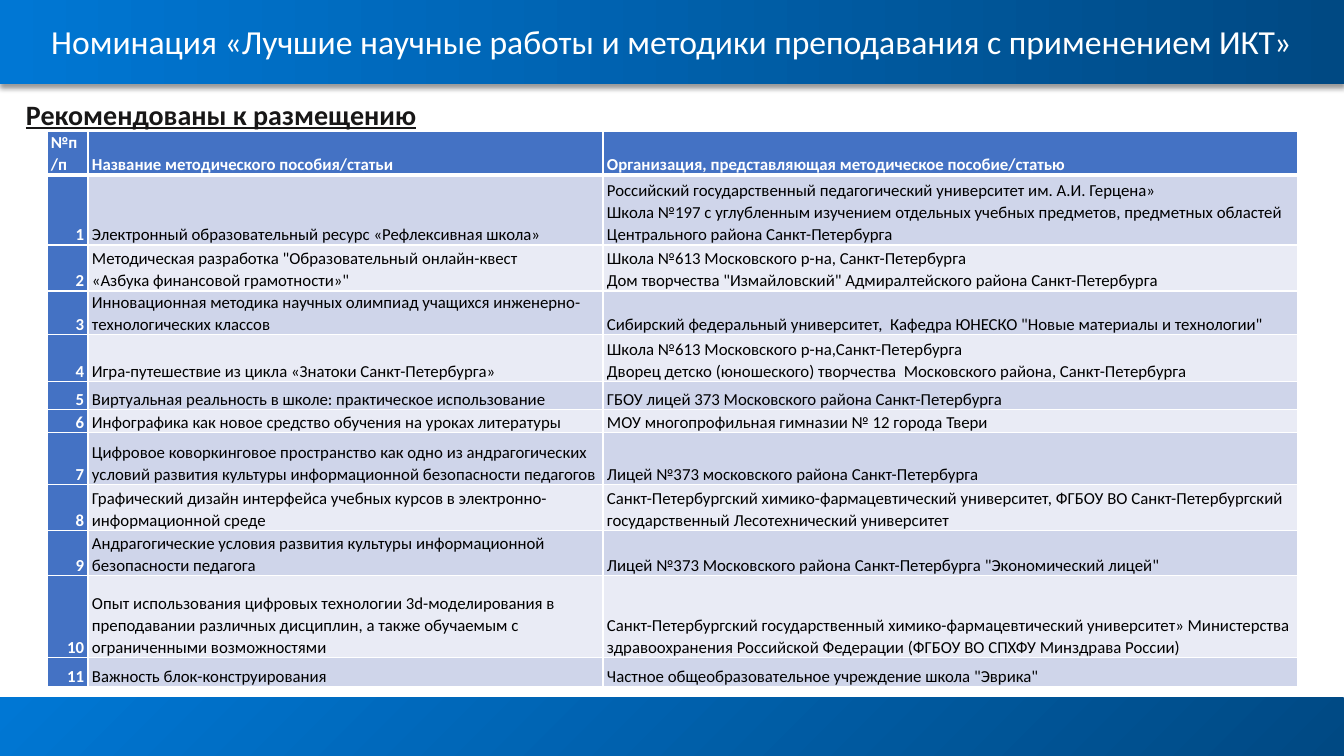
from lxml import etree
from pptx import Presentation
from pptx.dml.color import RGBColor
from pptx.enum.shapes import MSO_SHAPE
from pptx.enum.text import MSO_ANCHOR, PP_ALIGN
from pptx.oxml import parse_xml
from pptx.oxml.ns import nsdecls, qn
from pptx.util import Pt

RECT = MSO_SHAPE.RECTANGLE
MIDDLE, BOTTOM = MSO_ANCHOR.MIDDLE, MSO_ANCHOR.BOTTOM
LEFT, CENTER, RIGHT = PP_ALIGN.LEFT, PP_ALIGN.CENTER, PP_ALIGN.RIGHT

WIDE, HIGH = 1344, 756
SCALE = 12192000 / WIDE
FONT = "Calibri"
COLORS = {
    "navy": "004983", "sky": "0077D4", "white": "FFFFFF", "black": "000000",
    "ink": "181717", "head": "4472C4", "odd": "CFD5EA", "even": "E9EBF5",
}

TITLE = "Номинация «Лучшие научные работы и методики преподавания с применением ИКТ»"
COLS = [41, 515, 695]
HEIGHTS = [44, 70, 46, 44, 47, 28, 23, 52, 46, 45, 82, 29]
HEADER = ("№п/п", "Название методического пособия/статьи",
          "Организация, представляющая методическое пособие/статью")
WORKS = [
    ("Электронный образовательный ресурс «Рефлексивная школа»",
     "Российский государственный педагогический университет им. А.И. Герцена»\v"
     "Школа №197 с углубленным изучением отдельных учебных предметов, "
     "предметных областей Центрального района Санкт-Петербурга"),
    ("Методическая разработка \"Образовательный онлайн-квест\v"
     "«Азбука финансовой грамотности»\"",
     "Школа №613 Московского р-на, Санкт-Петербурга\n"
     "Дом творчества \"Измайловский\" Адмиралтейского района Санкт-Петербурга"),
    ("Инновационная методика научных олимпиад учащихся "
     "инженерно-технологических классов",
     "Сибирский федеральный университет,  Кафедра ЮНЕСКО "
     "\"Новые материалы и технологии\""),
    ("Игра-путешествие из цикла «Знатоки Санкт-Петербурга»",
     "Школа №613 Московского р-на,Санкт-Петербурга\v"
     "Дворец детско (юношеского) творчества  Московского района, Санкт-Петербурга"),
    ("Виртуальная реальность в школе: практическое использование",
     "ГБОУ лицей 373 Московского района Санкт-Петербурга"),
    ("Инфографика как новое средство обучения на уроках литературы",
     "МОУ многопрофильная гимназии № 12 города Твери"),
    ("Цифровое коворкинговое пространство как одно из андрагогических "
     "условий развития культуры информационной безопасности педагогов",
     "Лицей №373 московского района Санкт-Петербурга"),
    ("Графический дизайн интерфейса учебных курсов в "
     "электронно-информационной среде",
     "Санкт-Петербургский химико-фармацевтический университет, ФГБОУ ВО "
     "Санкт-Петербургский государственный Лесотехнический университет"),
    ("Андрагогические условия развития культуры информационной "
     "безопасности педагога",
     "Лицей №373 Московского района Санкт-Петербурга \"Экономический лицей\""),
    ("Опыт использования цифровых технологии 3d-моделирования в преподавании "
     "различных дисциплин, а также обучаемым с ограниченными возможностями",
     "Санкт-Петербургский государственный химико-фармацевтический университет» "
     "Министерства здравоохранения Российской Федерации "
     "(ФГБОУ ВО СПХФУ Минздрава России)"),
    ("Важность блок-конструирования",
     "Частное общеобразовательное учреждение школа \"Эврика\""),
]


def px(size):
    """Turn pixels into EMU."""
    return round(size * SCALE)


def tint(name):
    """Return the named colour."""
    return RGBColor.from_string(COLORS[name])


def write(frame, text, size, color, bold=False, line=False, align=LEFT, gap=1.0):
    """Fill a frame with paragraphs whose parts are set apart by line breaks."""
    for index, block in enumerate(text.split("\n")):
        para = frame.add_paragraph() if index else frame.paragraphs[0]
        para.alignment, para.line_spacing = align, gap
        for place, part in enumerate(block.split("\v")):
            if place:
                para.add_line_break()
            run = para.add_run()
            run.text = part
            font = run.font
            font.name, font.size = FONT, Pt(size)
            font.bold, font.underline = bold, line
            font.color.rgb = tint(color)


def add_bar(slide, top, high, stops, angle):
    """Add a full-width gradient bar."""
    bar = slide.shapes.add_shape(RECT, 0, px(top), px(WIDE), px(high))
    bar.shadow.inherit = False
    bar.line.fill.background()
    bar.fill.gradient()
    bar.fill.gradient_angle = angle
    for stop, name in zip(bar.fill.gradient_stops, stops):
        stop.color.rgb = tint(name)
    return bar


def add_shade(bar):
    """Drop a soft shadow below a bar."""
    effects = bar._element.spPr.find(qn("a:effectLst"))
    effects.append(parse_xml(
        f'<a:outerShdw {nsdecls("a")} blurRad="{Pt(4)}" dist="{Pt(3)}" '
        'dir="5400000" algn="t" rotWithShape="0">'
        f'<a:srgbClr val="{COLORS["black"]}"><a:alpha val="40000"/></a:srgbClr>'
        '</a:outerShdw>'))


def add_label(slide, left, top, wide, high):
    """Add a wrapping text box and return its frame."""
    box = slide.shapes.add_textbox(px(left), px(top), px(wide), px(high))
    box.text_frame.word_wrap = True
    return box.text_frame


def add_edges(cell, row):
    """Draw white borders, thick below the header row."""
    props = cell._tc.get_or_add_tcPr()
    widths = {"L": 1, "R": 1, "T": 3 if row == 1 else 1, "B": 1 if row else 3}
    for index, (side, width) in enumerate(widths.items()):
        edge = etree.Element(qn(f"a:ln{side}"), w=str(Pt(width)))
        fill = etree.SubElement(edge, qn("a:solidFill"))
        etree.SubElement(fill, qn("a:srgbClr"), val=COLORS["white"])
        props.insert(index, edge)


def fill_cell(cell, text, row, col):
    """Style and fill one table cell."""
    strong = row == 0 or col == 0
    cell.margin_left = cell.margin_right = px(4)
    cell.margin_top = cell.margin_bottom = 0
    cell.vertical_anchor = BOTTOM
    cell.fill.solid()
    cell.fill.fore_color.rgb = tint("head" if strong else "odd" if row % 2 else "even")
    add_edges(cell, row)
    write(cell.text_frame, text, 12, "white" if strong else "black", bold=strong,
          align=RIGHT if row and col == 0 else LEFT, gap=1.07)


def add_works(slide):
    """Add the table of recommended works."""
    rows = [HEADER] + [(str(num), *work) for num, work in enumerate(WORKS, 1)]
    table = slide.shapes.add_table(len(rows), len(COLS), px(47), px(131),
                                   px(sum(COLS)), px(sum(HEIGHTS))).table
    for column, wide in zip(table.columns, COLS):
        column.width = px(wide)
    for row, (texts, high) in enumerate(zip(rows, HEIGHTS)):
        table.rows[row].height = px(high)
        for col, text in enumerate(texts):
            fill_cell(table.cell(row, col), text, row, col)


def main():
    """Build and save the slide."""
    deck = Presentation()
    deck.slide_width, deck.slide_height = px(WIDE), px(HIGH)
    slide = deck.slides.add_slide(deck.slide_layouts[6])
    add_bar(slide, 698, 58, ("navy", "sky"), 135)
    add_shade(add_bar(slide, 0, 84, ("sky", "navy"), 0))
    write(add_label(slide, 16, 96, 1311, 35), "Рекомендованы к размещению",
          20, "ink", bold=True, line=True, gap=0.9)
    title = add_label(slide, 46, 17, 1251, 50)
    title.margin_left = title.margin_right = 0
    title.margin_top = title.margin_bottom = 0
    title.vertical_anchor = MIDDLE
    write(title, TITLE, 24, "white", align=CENTER, gap=Pt(27.8))
    add_works(slide)
    deck.save("out.pptx")


if __name__ == "__main__":
    main()
